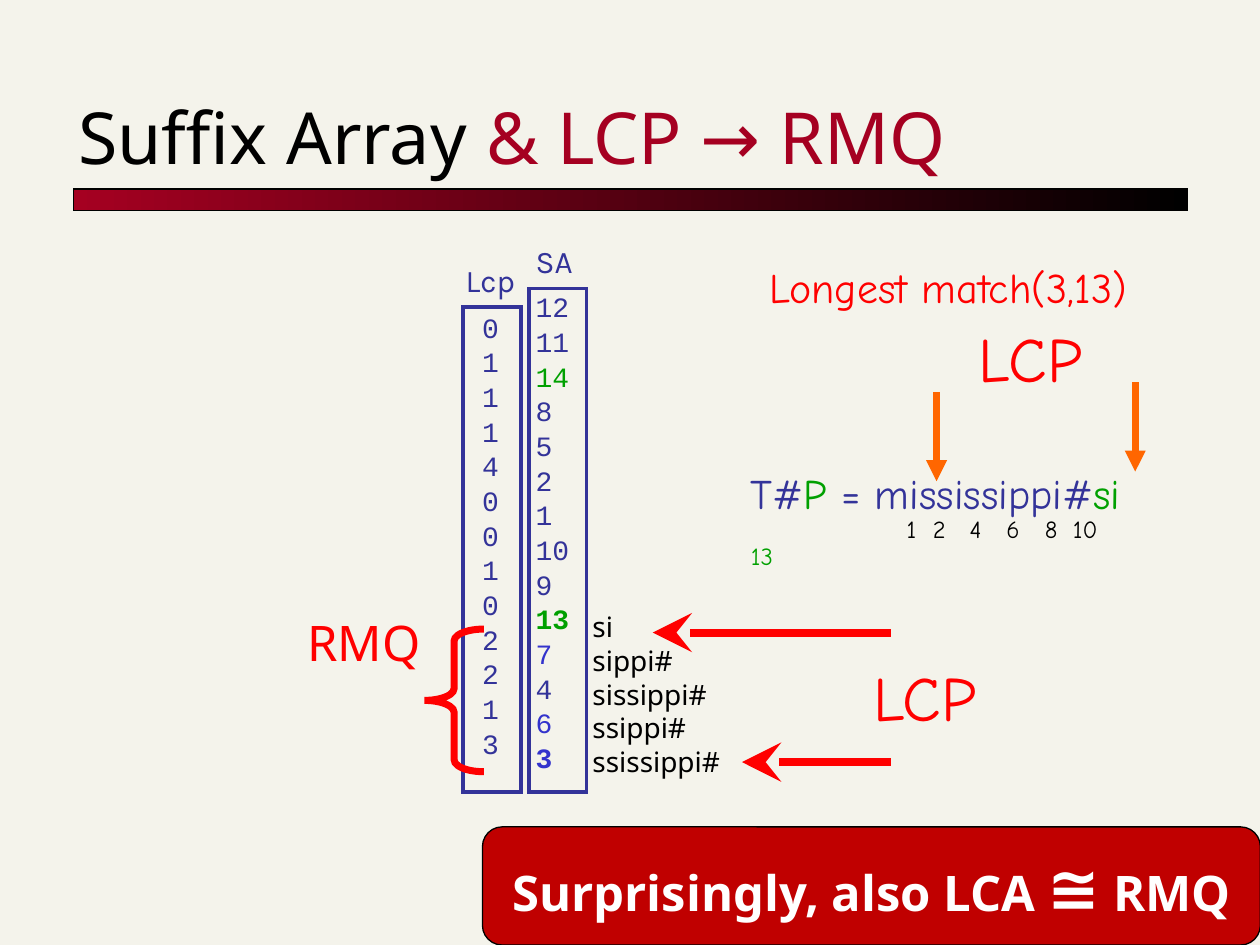
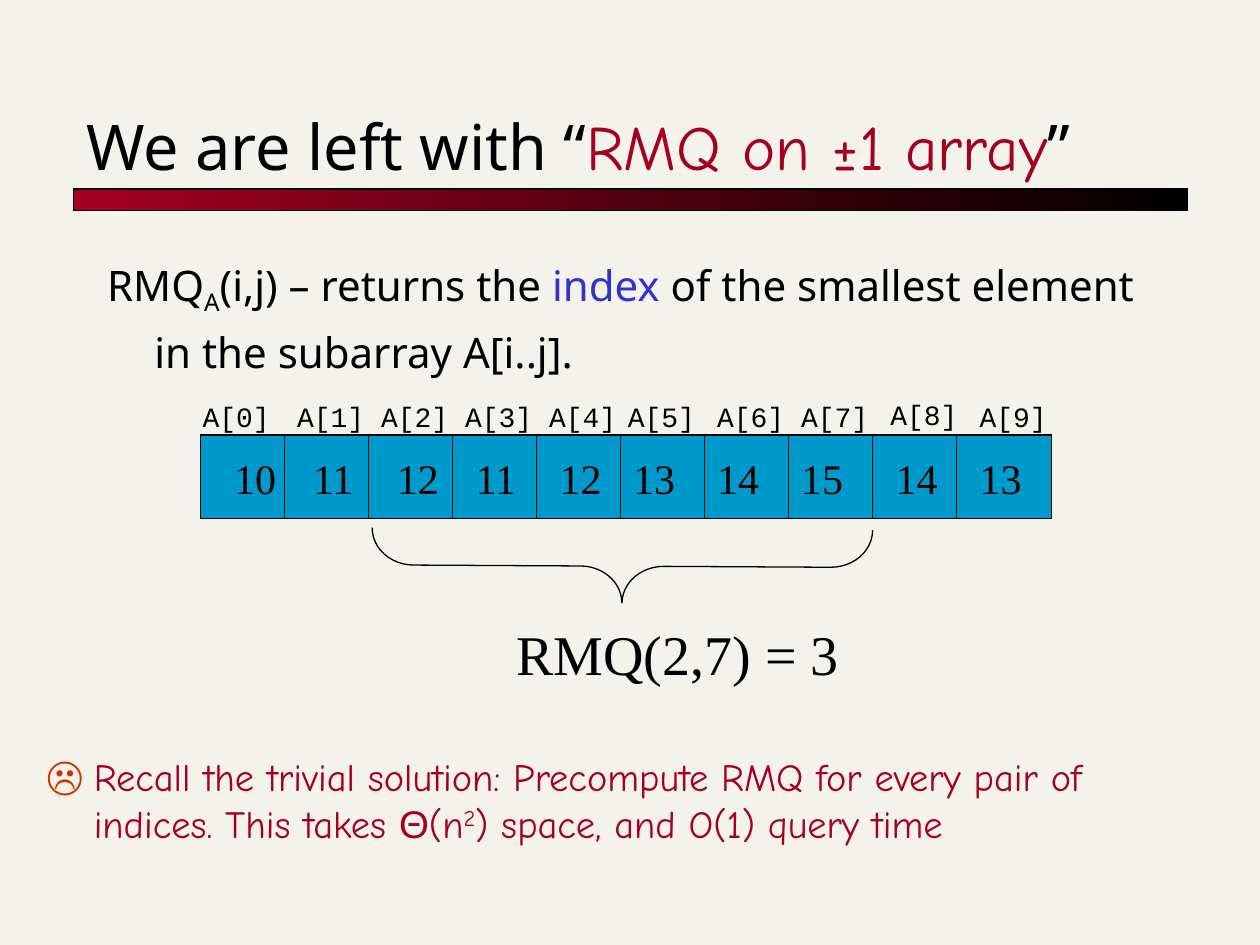
from dataclasses import dataclass, replace

import lxml.etree
import pptx
import pptx.dml.color
import pptx.enum.shapes
import pptx.enum.text
import pptx.oxml.ns
import pptx.presentation
import pptx.shapes.autoshape
import pptx.slide
import pptx.text.text
import pptx.util

Pt = pptx.util.Pt
SHAPE = pptx.enum.shapes.MSO_SHAPE
ANCHOR = pptx.enum.text.MSO_ANCHOR
ALIGN = pptx.enum.text.PP_ALIGN
AUTO_SIZE = pptx.enum.text.MSO_AUTO_SIZE

PAPER, BLACK, WHITE = "F4F3EB", "000000", "FFFFFF"
CRIMSON, RED, DARK_RED, ORANGE = "A50021", "FF0000", "C00000", "FF6600"
NAVY, BLUE, GREEN, CELL_BLUE = "333399", "3333CC", "00A000", "0099CC"
SANS, COMIC, MONO, SERIF = "Noto Sans", "Comic Neue", "Courier New", "Times New Roman"


@dataclass(frozen=True)
class Box:
    left: float
    top: float
    width: float
    height: float

    def lengths(self) -> list[pptx.util.Length]:
        return [Pt(v) for v in (self.left, self.top, self.width, self.height)]


@dataclass(frozen=True)
class Style:
    font: str
    size: float
    color: str = BLACK
    bold: bool = False
    baseline: int = 0


@dataclass(frozen=True)
class Run:
    text: str
    style: Style


@dataclass(frozen=True)
class Layout:
    """Paragraph spacing, hanging indent and alignment."""
    line: float = 1.0
    before: float = 0
    hang: float = 0
    align: ALIGN = ALIGN.LEFT


@dataclass(frozen=True)
class Arrow:
    x1: float
    y1: float
    x2: float
    y2: float
    color: str
    width: float
    head: str = ""
    head_size: str = "med"


@dataclass(frozen=True)
class Column:
    heading: str
    heading_box: Box
    frame: Box
    values_box: Box
    values: list[Run]


def rgb(color: str) -> pptx.dml.color.RGBColor:
    return pptx.dml.color.RGBColor.from_string(color)


def add_xml(parent, tag: str, **attributes: str):
    child = lxml.etree.SubElement(parent, pptx.oxml.ns.qn(tag))
    for key, value in attributes.items():
        child.set(key, value)
    return child


def write(frame: pptx.text.text.TextFrame, lines: list[list[Run]],
          layout: Layout = Layout()) -> None:
    for number, line in enumerate(lines):
        paragraph = frame.paragraphs[0] if number == 0 else frame.add_paragraph()
        paragraph.alignment = layout.align
        paragraph.line_spacing = layout.line
        paragraph.space_before = Pt(layout.before)
        if layout.hang:
            properties = paragraph._p.get_or_add_pPr()
            properties.set("marL", str(Pt(layout.hang)))
            properties.set("indent", str(-Pt(layout.hang)))
        for part in line:
            run = paragraph.add_run()
            run.text = part.text
            run.font.name = part.style.font
            run.font.size = Pt(part.style.size)
            run.font.bold = part.style.bold
            run.font.color.rgb = rgb(part.style.color)
            if part.style.baseline:
                run._r.get_or_add_rPr().set("baseline", str(part.style.baseline * 1000))


def add_text(slide: pptx.slide.Slide, box: Box, lines: list[list[Run]],
             layout: Layout = Layout(), wrap: bool = False) -> pptx.text.text.TextFrame:
    frame = slide.shapes.add_textbox(*box.lengths()).text_frame
    frame.word_wrap = wrap
    frame.auto_size = AUTO_SIZE.NONE if wrap else AUTO_SIZE.SHAPE_TO_FIT_TEXT
    write(frame, lines, layout)
    return frame


def add_label(slide: pptx.slide.Slide, box: Box, text: str, style: Style) -> None:
    add_text(slide, box, [[Run(text, style)]])


def add_shape(slide: pptx.slide.Slide, kind: SHAPE, box: Box, line: str = BLACK,
              width: float = 0.75, fill: str = "") -> pptx.shapes.autoshape.Shape:
    shape = slide.shapes.add_shape(kind, *box.lengths())
    shape.shadow.inherit = False
    shape.line.color.rgb = rgb(line)
    shape.line.width = Pt(width)
    add_xml(shape.line._get_or_add_ln(), "a:miter", lim="800000")
    if fill:
        shape.fill.solid()
        shape.fill.fore_color.rgb = rgb(fill)
    else:
        shape.fill.background()
    return shape


def add_line(slide: pptx.slide.Slide, arrow: Arrow) -> None:
    ends = [Pt(v) for v in (arrow.x1, arrow.y1, arrow.x2, arrow.y2)]
    connector = slide.shapes.add_connector(pptx.enum.shapes.MSO_CONNECTOR.STRAIGHT, *ends)
    connector.line.color.rgb = rgb(arrow.color)
    connector.line.width = Pt(arrow.width)
    if arrow.head:
        add_xml(connector.line._get_or_add_ln(), "a:tailEnd", type=arrow.head,
                w=arrow.head_size, len=arrow.head_size)
    add_xml(connector._element.spPr, "a:effectLst")


def fill_placeholder(shape, box: Box, runs: list[Run], layout: Layout, anchor: ANCHOR) -> None:
    shape.left, shape.top, shape.width, shape.height = box.lengths()
    shape.text_frame.auto_size = AUTO_SIZE.NONE
    shape.text_frame.vertical_anchor = anchor
    write(shape.text_frame, [runs], layout)


def add_master_bar(deck: pptx.presentation.Presentation, slide: pptx.slide.Slide) -> None:
    """Draw the title rule and move it to the master, with the background."""
    background = deck.slide_master.background.fill
    background.solid()
    background.fore_color.rgb = rgb(PAPER)
    bar = add_shape(slide, SHAPE.RECTANGLE, Box(42, 108, 636.5, 12.5))
    bar.fill.gradient()
    bar.fill.gradient_angle = 0
    for stop, color, position in zip(bar.fill.gradient_stops, (CRIMSON, BLACK), (0, 1)):
        stop.color.rgb = rgb(color)
        stop.position = position
    deck.slide_master.element.cSld.spTree.append(bar.element)


def add_column(slide: pptx.slide.Slide, column: Column) -> None:
    add_shape(slide, SHAPE.RECTANGLE, column.frame, NAVY, 2)
    add_label(slide, column.heading_box, column.heading, Style("Karla", 18, NAVY))
    add_text(slide, column.values_box, [[value] for value in column.values],
             Layout(0.95, 1.6, 36), wrap=True)


def build_suffix_array(slide: pptx.slide.Slide) -> None:
    heading = Style(SANS, 41)
    fill_placeholder(slide.shapes.title, Box(37.5, 64, 612, 42),
                     [Run("Suffix Array ", heading),
                      Run("& LCP → RMQ", replace(heading, color=CRIMSON))],
                     Layout(1.2), ANCHOR.BOTTOM)

    number = Style(MONO, 16, NAVY)
    special = {14: Style(MONO, 16, GREEN), 13: Style(MONO, 16, GREEN, True),
               7: Style(MONO, 16, BLUE), 6: Style(MONO, 16, BLUE),
               3: Style(MONO, 16, BLUE, True)}
    suffixes = [12, 11, 14, 8, 5, 2, 1, 10, 9, 13, 7, 4, 6, 3]
    prefixes = [0, 1, 1, 1, 4, 0, 0, 1, 0, 2, 2, 1, 3]
    add_column(slide, Column("SA", Box(299, 134.5, 38, 29), Box(302.2, 165, 33, 287.5),
                             Box(299, 163.5, 42, 291),
                             [Run(str(v), special.get(v, number)) for v in suffixes]))
    add_column(slide, Column("Lcp", Box(259, 145.5, 45.5, 29), Box(264.7, 175.5, 33, 277),
                             Box(268.5, 175, 42, 287),
                             [Run(str(v), number) for v in prefixes]))

    text = Style(COMIC, 24, NAVY)
    pattern = replace(text, color=GREEN)
    index = Style(COMIC, 14)
    frame = add_text(slide, Box(422, 263.5, 247, 66), [
        [Run("T#", text), Run("P", pattern), Run(" = mississippi#", text), Run("si", pattern)],
        [Run("\t1\t2\t4\t6\t8\t10", index)],
        [Run("13", replace(index, color=GREEN))]], wrap=True)
    for paragraph in frame.paragraphs[1:]:
        paragraph.line_spacing = 0.9
    tabs = add_xml(frame.paragraphs[1]._p.get_or_add_pPr(), "a:tabLst")
    for stop in (89, 104, 125, 146, 168, 184):
        add_xml(tabs, "a:tab", pos=str(Pt(stop)), algn="l")

    brace = add_shape(slide, SHAPE.LEFT_BRACE, Box(242.5, 359.5, 34, 81.5), RED, 4)
    brace.adjustments[0] = 0.2
    add_label(slide, Box(168.5, 346.5, 82, 41), "RMQ", Style(SANS, 28, RED))
    matches = ["si", "sippi#", "sissippi#", "ssippi#", "ssissippi#"]
    add_text(slide, Box(331.5, 345, 91.5, 103.5), [[Run(m, Style(SANS, 16))] for m in matches])

    for arrow in (Arrow(509, 361.5, 373, 361.5, RED, 4.5, "stealth", "lg"),
                  Arrow(509, 435.5, 424, 435.5, RED, 4.5, "stealth", "lg"),
                  Arrow(648.7, 218.5, 648.7, 269.5, ORANGE, 4, "triangle"),
                  Arrow(535.2, 224, 535.2, 275, ORANGE, 4, "triangle")):
        add_line(slide, arrow)
    for left, top in ((492, 373), (552.3, 179)):
        add_label(slide, Box(left, top, 75, 50.5), "LCP", Style(COMIC, 36, RED))
    add_label(slide, Box(432.5, 146, 243.5, 36), "Longest match(3,13)", Style(COMIC, 24, RED))

    banner = add_shape(slide, SHAPE.ROUNDED_RECTANGLE, Box(275.7, 472.5, 444.5, 67.5),
                       fill=DARK_RED)
    banner.text_frame.word_wrap = False
    banner.text_frame.vertical_anchor = ANCHOR.MIDDLE
    remark = Style(SANS, 28, WHITE, True)
    write(banner.text_frame, [[Run("Surprisingly, also LCA ", remark),
                               Run("≅", replace(remark, size=36)),
                               Run(" RMQ", remark)]], Layout(align=ALIGN.CENTER))


def add_array(slide: pptx.slide.Slide) -> None:
    left, top, cell = 114.75, 248.5, 48
    values = [10, 11, 12, 11, 12, 13, 14, 15, 14, 13]
    value_shifts = [12, 9, 9, 6, 6, 0, 0, 0, 6, 6]
    name_shifts = [-6, 0, 0, 0, 0, -3, 0, 0, 3, 6]
    add_shape(slide, SHAPE.RECTANGLE, Box(left, top, 486, cell), fill=CELL_BLUE)
    for i, (value, value_shift, name_shift) in enumerate(zip(values, value_shifts, name_shifts)):
        x = left + i * cell
        if i:
            add_line(slide, Arrow(x, top, x, top + cell, BLACK, 0.75))
        add_text(slide, Box(x + value_shift, top + 6.5, 50, 36),
                 [[Run(str(value), Style(SERIF, 24))]], wrap=True)
        name_top = top - (25 if i == 8 else 24)
        add_label(slide, Box(x + name_shift, name_top, 53, 26.5), f"A[{i}]", Style(MONO, 16))


def build_range_minimum(slide: pptx.slide.Slide) -> None:
    heading = Style(SANS, 36)
    fill_placeholder(slide.shapes.title, Box(42, 30, 636, 78),
                     [Run("We are left with “", heading),
                      Run("RMQ on ±1 array", Style(COMIC, 36, CRIMSON)),
                      Run("”", heading)], Layout(), ANCHOR.BOTTOM)

    body = slide.placeholders[1]
    plain = Style(SANS, 24)
    fill_placeholder(body, Box(54, 138, 612, 68.5),
                     [Run("RMQ", plain), Run("A", replace(plain, baseline=-25)),
                      Run("(i,j) – returns the ", plain),
                      Run("index", replace(plain, color=BLUE)),
                      Run(" of the smallest element in the subarray A[i..j].", plain)],
                     Layout(1.2, 5, 27), ANCHOR.TOP)
    add_xml(body.text_frame.paragraphs[0]._p.get_or_add_pPr(), "a:buNone")

    add_array(slide)
    brace = add_shape(slide, SHAPE.LEFT_BRACE, Box(334.3, 180.5, 42.5, 286))
    brace.adjustments[0] = 0.56
    brace.rotation = 270.3
    add_text(slide, Box(277.25, 350.5, 220, 45.5), [[Run("RMQ(2,7) = 3", Style(SERIF, 32))]],
             Layout(align=ALIGN.CENTER), wrap=True)

    recall = Style(COMIC, 22, CRIMSON)
    frame = add_text(slide, Box(19.5, 427, 664, 67), [[
        Run("Recall the trivial solution: Precompute RMQ for every pair of indices. "
            "This takes ", recall),
        Run("Θ", replace(recall, font="Arial")), Run("(n", recall),
        Run("2", replace(recall, baseline=30)),
        Run(") space, and O(1) query time", recall)]], Layout(before=4.5, hang=27), wrap=True)
    properties = frame.paragraphs[0]._p.get_or_add_pPr()
    add_xml(add_xml(properties, "a:buClr"), "a:srgbClr", val="CC3300")
    add_xml(properties, "a:buSzPct", val="105000")
    add_xml(properties, "a:buFont", typeface="Arial")
    add_xml(properties, "a:buChar", char="☹")


def main() -> None:
    deck = pptx.Presentation()
    deck.slide_width, deck.slide_height = Pt(720), Pt(540)
    suffix_array = deck.slides.add_slide(deck.slide_layouts[5])
    add_master_bar(deck, suffix_array)
    build_suffix_array(suffix_array)
    build_range_minimum(deck.slides.add_slide(deck.slide_layouts[1]))
    deck.save("out.pptx")


if __name__ == "__main__":
    main()
